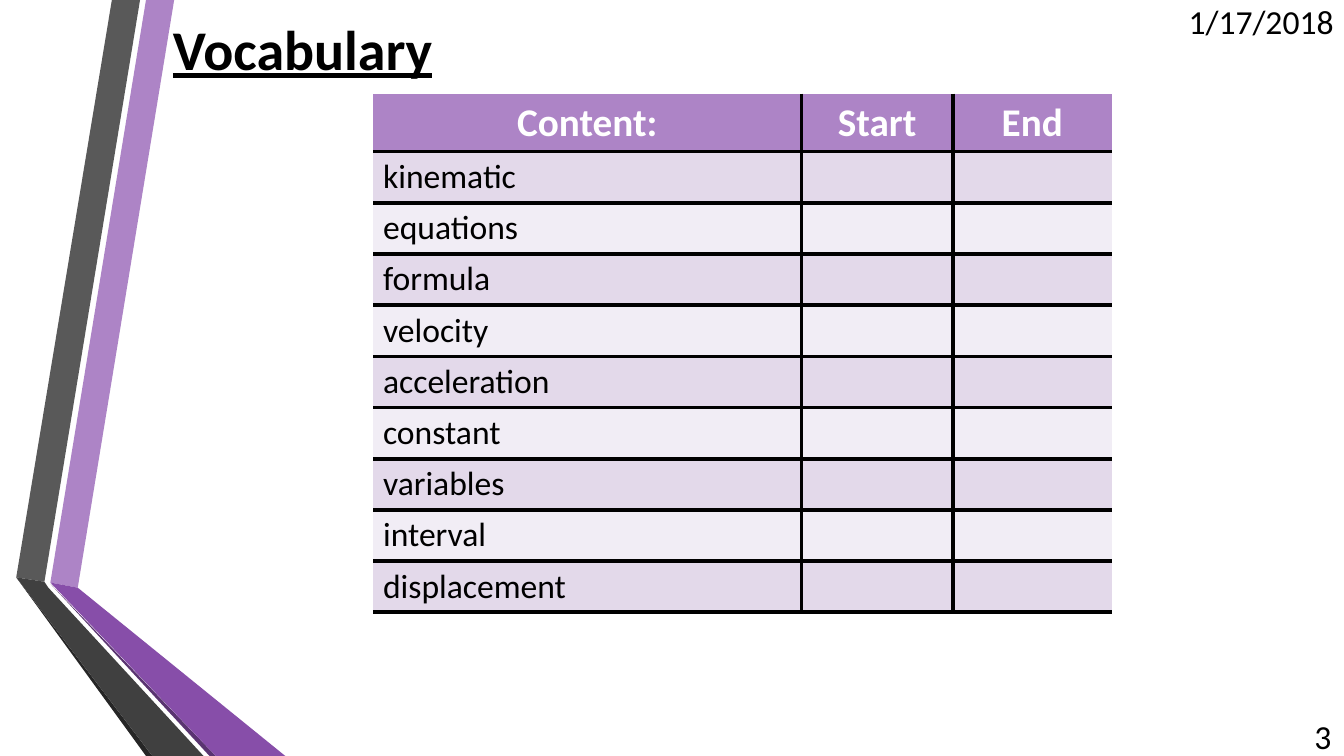
from lxml import etree
from pptx import Presentation
from pptx.dml.color import RGBColor
from pptx.enum.text import MSO_ANCHOR, PP_ALIGN
from pptx.oxml.ns import qn
from pptx.util import Cm, Pt

LEFT, CENTER, RIGHT = PP_ALIGN.LEFT, PP_ALIGN.CENTER, PP_ALIGN.RIGHT
TOP, MIDDLE = MSO_ANCHOR.TOP, MSO_ANCHOR.MIDDLE

COLORS = {
    "black": "000000", "white": "FFFFFF",
    "lilac": "AD84C6", "purple": "874EA9", "deep purple": "5A3471",
    "gray": "595959", "charcoal": "404040", "soot": "262626",
    "odd row": "E3D9EA", "even row": "F1EDF5",
}

# Ribbon outlines in cm, back to front
RIBBONS = [
    ("lilac", [(1.27, 14.68), (1.96, 14.81), (4.39, 0), (3.68, 0)]),
    ("gray", [(3.53, 0), (2.82, 0), (0.41, 14.55), (1.12, 14.66)]),
    ("soot", [(0.41, 14.55), (3.68, 19.05), (3.84, 19.05)]),
    ("deep purple", [(1.27, 14.71), (5.28, 19.05), (5.44, 19.05)]),
    ("purple", [(1.27, 14.68), (5.44, 19.05), (7.19, 19.05), (1.96, 14.81)]),
    ("charcoal", [(5.13, 19.05), (1.22, 14.81), (1.12, 14.66),
                  (0.41, 14.55), (3.84, 19.05)]),
]

HEADINGS = ["Content:", "Start", "End"]
WORDS = ["kinematic", "equations", "formula", "velocity", "acceleration",
         "constant", "variables", "interval", "displacement"]
COLUMN_WIDTHS = [10.8, 3.81, 4.01]
HEADING_HEIGHT, WORD_HEIGHT = 1.46, 1.29


class SlideBuilder:
    font = "Calibri"
    border_width = Pt(3)

    def __init__(self, slide):
        self.slide = slide

    def color(self, name):
        return RGBColor.from_string(COLORS[name])

    def style_text(self, frame, text, size, color="black", align=LEFT,
                   bold=False, underline=False):
        paragraph = frame.paragraphs[0]
        paragraph.text = text
        paragraph.alignment = align
        for font in [paragraph.font] + [run.font for run in paragraph.runs]:
            font.name = self.font
            font.size = Pt(size)
            font.bold = bold
            font.underline = underline
            font.color.rgb = self.color(color)

    def text(self, text, left, top, width, height, size, **style):
        box = self.slide.shapes.add_textbox(
            Cm(left), Cm(top), Cm(width), Cm(height))
        box.text_frame.word_wrap = True
        box.text_frame.vertical_anchor = MIDDLE
        self.style_text(box.text_frame, text, size, **style)

    def ribbon(self, color, corners):
        start, *others = [(round(x * 100), round(y * 100)) for x, y in corners]
        outline = self.slide.shapes.build_freeform(*start, scale=Cm(0.01))
        outline.add_line_segments(others, close=True)
        shape = outline.convert_to_shape()
        shape.shadow.inherit = False
        shape.fill.solid()
        shape.fill.fore_color.rgb = self.color(color)
        shape.line.fill.background()

    def borders(self, cell, sides):
        properties = cell._tc.get_or_add_tcPr()
        for side in "LRTB":
            line = etree.SubElement(properties, qn(f"a:ln{side}"))
            if side in sides:
                line.set("w", str(self.border_width))
                fill = etree.SubElement(line, qn("a:solidFill"))
                etree.SubElement(fill, qn("a:srgbClr"), val=COLORS["black"])
            else:
                etree.SubElement(line, qn("a:noFill"))

    def cell(self, cell, text, sides, fill, anchor, size, **style):
        self.borders(cell, sides)
        cell.fill.solid()
        cell.fill.fore_color.rgb = self.color(fill)
        cell.vertical_anchor = anchor
        self.style_text(cell.text_frame, text, size, **style)

    def table(self, left, top, headings, words, widths):
        heights = [HEADING_HEIGHT] + [WORD_HEIGHT] * len(words)
        table = self.slide.shapes.add_table(
            len(heights), len(widths), Cm(left), Cm(top),
            Cm(sum(widths)), Cm(sum(heights))).table
        for column, width in zip(table.columns, widths):
            column.width = Cm(width)
        for row, height in zip(table.rows, heights):
            row.height = Cm(height)

        rows = [headings] + [[word, "", ""] for word in words]
        for r, row in enumerate(rows):
            for c, text in enumerate(row):
                # Rules lie between columns and under every row
                sides = "B" + "T" * (r > 0) + "L" * (c > 0)
                sides += "R" * (c < len(widths) - 1)
                cell = table.cell(r, c)
                if r == 0:
                    self.cell(cell, text, sides, "lilac", MIDDLE, 28,
                              color="white", align=CENTER, bold=True)
                else:
                    band = "odd row" if r % 2 else "even row"
                    self.cell(cell, text, sides, band, TOP, 24)


def main():
    presentation = Presentation()
    presentation.slide_width = Cm(33.87)
    presentation.slide_height = Cm(19.05)
    blank = presentation.slide_layouts[6]
    builder = SlideBuilder(presentation.slides.add_slide(blank))

    # Folded ribbons on the left
    for color, corners in RIBBONS:
        builder.ribbon(color, corners)

    # Title, date and page number
    builder.text("Vocabulary", 4.11, 0.03, 27.84, 2.34, 40,
                 bold=True, underline=True)
    builder.text("1/17/2018", 28.83, 0.03, 5.03, 1.02, 24, align=RIGHT)
    builder.text("3", 31.95, 18.03, 1.85, 1.02, 24, align=RIGHT)

    # Vocabulary table
    builder.table(9.4, 2.36, HEADINGS, WORDS, COLUMN_WIDTHS)

    presentation.save("out.pptx")


if __name__ == "__main__":
    main()
